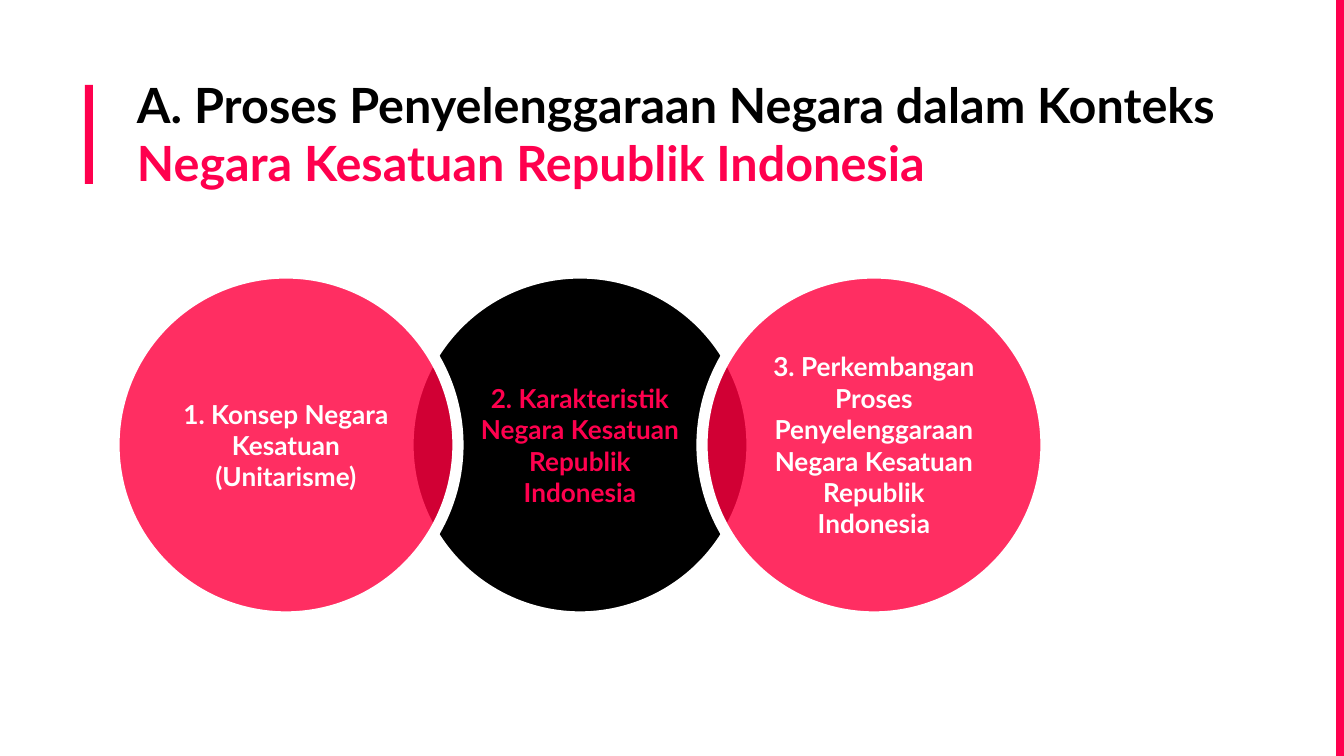
from lxml.etree import SubElement
from pptx import Presentation
from pptx.dml.color import RGBColor
from pptx.enum.shapes import MSO_SHAPE
from pptx.enum.text import MSO_ANCHOR, MSO_AUTO_SIZE, PP_ALIGN
from pptx.oxml.ns import qn
from pptx.util import Emu, Pt

TITLE = [
    ("A. Proses Penyelenggaraan Negara dalam Konteks ", "black"),
    ("Negara Kesatuan Republik Indonesia", "accent"),
]
CIRCLES = [
    (1, "2. Karakteristik Negara Kesatuan Republik Indonesia", "black", "accent", 100),
    (0, "1. Konsep Negara Kesatuan (Unitarisme)", "rose", "white", 82),
    (2, "3. Perkembangan Proses Penyelenggaraan Negara Kesatuan Republik Indonesia",
     "rose", "white", 82),
]
BARS = [(85, 85, 8, 99), (1336, 0, 8, 756)]
TITLE_BOX = (124, 62, 1172, 126)
FIRST_LEFT, CIRCLE_TOP, DIAMETER, PITCH = 114, 273, 344, 294

THEME = {
    "font": "Lato",
    "title": 26,
    "label": 14,
    "outline": 6,
    "black": RGBColor(0x00, 0x00, 0x00),
    "white": RGBColor(0xFF, 0xFF, 0xFF),
    "accent": RGBColor(0xFF, 0x00, 0x4E),
    "rose": RGBColor(0xFF, 0x00, 0x40),
}


def px(value):
    return Emu(round(value * 914400 / 134.4))


def style_span(span, size, color):
    span.font.name = THEME["font"]
    span.font.size = Pt(THEME[size])
    span.font.bold = True
    span.font.color.rgb = THEME[color]


def prepare_frame(frame, anchor):
    frame.word_wrap = True
    frame.auto_size = MSO_AUTO_SIZE.NONE
    frame.vertical_anchor = anchor
    frame.margin_left = frame.margin_right = px(13)
    frame.margin_top = frame.margin_bottom = px(13)


def add_filled(slide, kind, box, color, opacity=100):
    shape = slide.shapes.add_shape(kind, *map(px, box))
    shape.shadow.inherit = False
    shape.fill.solid()
    shape.fill.fore_color.rgb = THEME[color]
    if opacity < 100:
        tone = shape.fill._xPr.find(qn("a:solidFill"))[0]
        SubElement(tone, qn("a:alpha")).set("val", str(opacity * 1000))
    return shape


def add_title(slide):
    title = slide.shapes.title
    title.left, title.top, title.width, title.height = map(px, TITLE_BOX)
    prepare_frame(title.text_frame, MSO_ANCHOR.TOP)
    para = title.text_frame.paragraphs[0]
    para.alignment = PP_ALIGN.LEFT
    para.line_spacing = 1.0
    for text, color in TITLE:
        span = para.add_run()
        span.text = text
        style_span(span, "title", color)


def add_circle(slide, position, text, fill, color, opacity):
    box = (FIRST_LEFT + position * PITCH, CIRCLE_TOP, DIAMETER, DIAMETER)
    circle = add_filled(slide, MSO_SHAPE.OVAL, box, fill, opacity)
    circle.line.color.rgb = THEME["white"]
    circle.line.width = Pt(THEME["outline"])
    prepare_frame(circle.text_frame, MSO_ANCHOR.MIDDLE)
    circle.text_frame.text = text
    para = circle.text_frame.paragraphs[0]
    para.alignment = PP_ALIGN.CENTER
    style_span(para.runs[0], "label", color)


def main():
    deck = Presentation()
    deck.slide_width, deck.slide_height = px(1344), px(756)
    slide = deck.slides.add_slide(deck.slide_layouts[5])
    add_title(slide)
    for box in BARS:
        add_filled(slide, MSO_SHAPE.RECTANGLE, box, "accent").line.fill.background()
    for circle in CIRCLES:
        add_circle(slide, *circle)
    deck.save("out.pptx")


if __name__ == "__main__":
    main()
